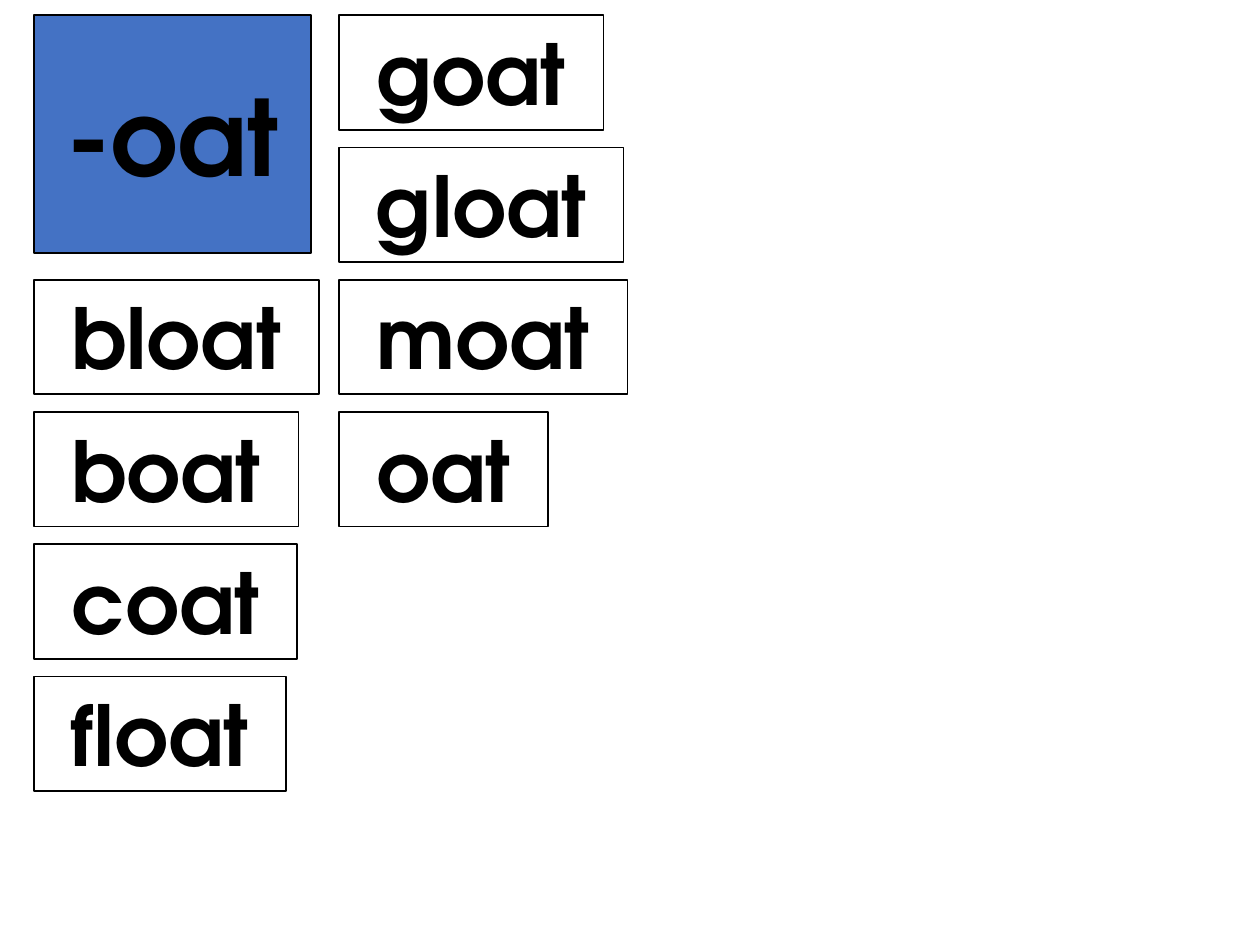
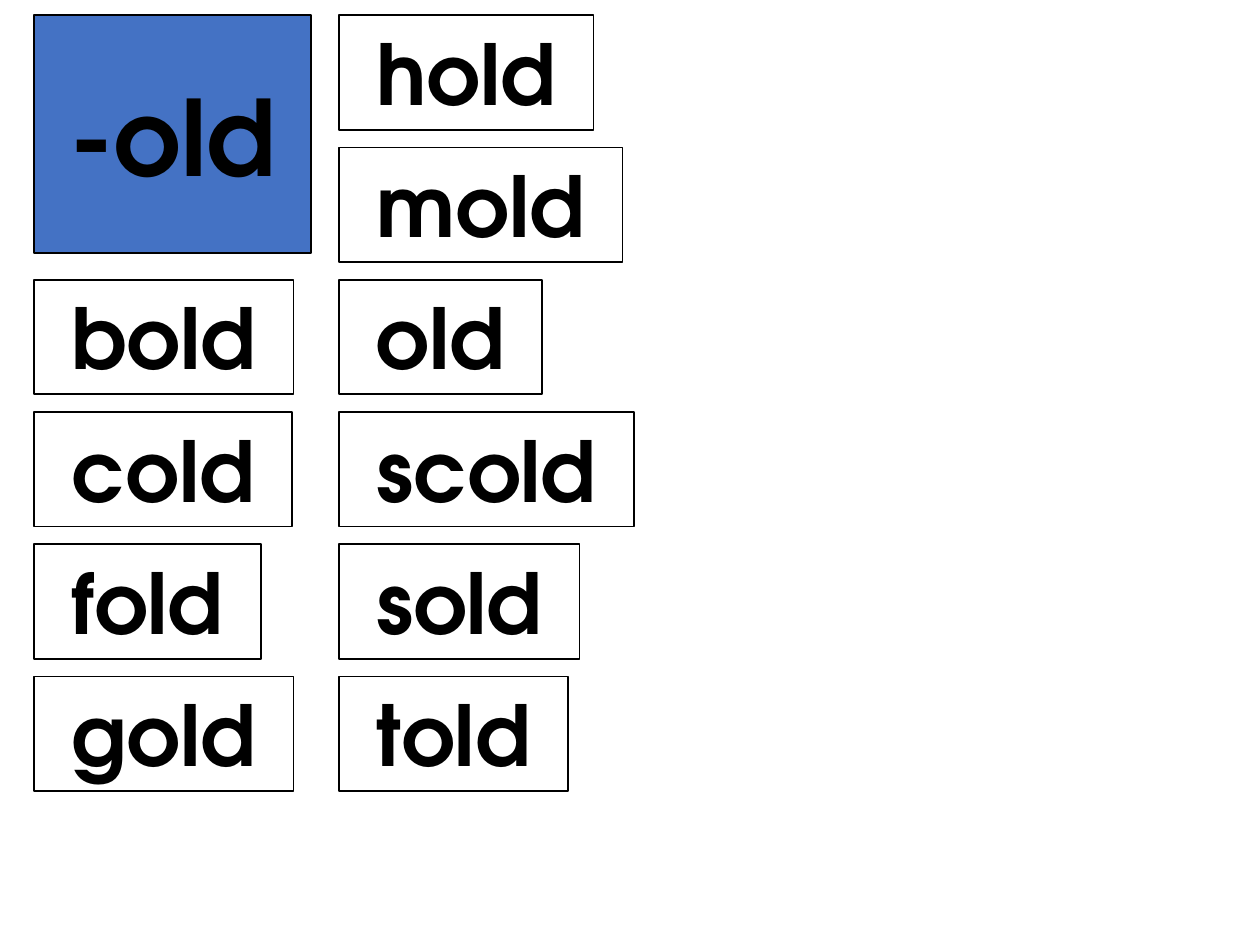
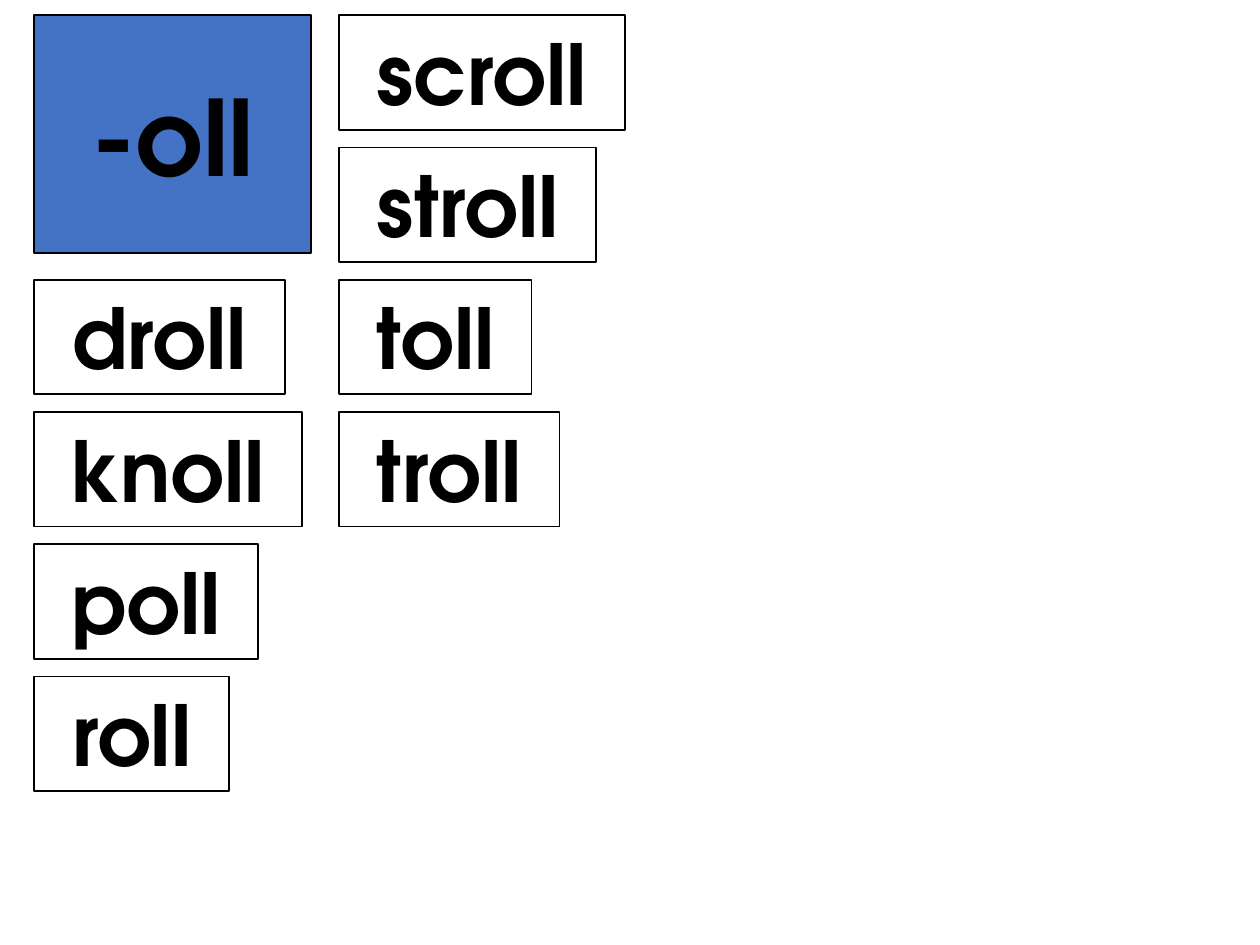
from pptx import Presentation
from pptx import util as u
from pptx.dml.color import RGBColor
from pptx.enum import text

BLACK = RGBColor(0x00, 0x00, 0x00)
WHITE = RGBColor(0xFF, 0xFF, 0xFF)
BLUE = RGBColor(0x44, 0x72, 0xC4)
FONT = "TeX Gyre Adventor"
NBSP = " "

TITLE_ONLY = 5
LEFT_COLUMN, RIGHT_COLUMN = 0.27, 2.69
TOP, ROW_STEP = 0.12, 1.05
CARD_HEIGHT = 0.91
ENDING_WIDTH, ENDING_HEIGHT = 2.2, 1.89
LEFT_FIRST_ROW, RIGHT_FIRST_ROW = 2, 0

WORD_FAMILIES = [
    (
        "-oat",
        [("bloat", 2.26), ("boat", 2.1), ("coat", 2.09), ("float", 2.0)],
        [("goat", 2.1), ("gloat", 2.26), ("moat", 2.29), ("oat", 1.66)],
    ),
    (
        "-old",
        [("bold", 2.06), ("cold", 2.05), ("fold", 1.8), ("gold", 2.06)],
        [("hold", 2.02), ("mold", 2.25), ("old", 1.61),
         ("scold", 2.34), ("sold", 1.91), ("told", 1.82)],
    ),
    (
        "-oll",
        [("droll", 1.99), ("knoll", 2.13), ("poll", 1.78), ("roll", 1.55)],
        [("scroll", 2.27), ("stroll", 2.04), ("toll", 1.53), ("troll", 1.75)],
    ),
]


class WordWall:
    def __init__(self, presentation):
        self.presentation = presentation
        self.slide = None

    def add_slide(self):
        layout = self.presentation.slide_layouts[TITLE_ONLY]
        self.slide = self.presentation.slides.add_slide(layout)

    def style(self, shape, words, size, fill):
        shape.fill.solid()
        shape.fill.fore_color.rgb = fill
        shape.line.color.rgb = BLACK
        shape.line.width = u.Pt(1)
        shape.text_frame.text = words
        paragraph = shape.text_frame.paragraphs[0]
        paragraph.alignment = text.PP_ALIGN.CENTER
        font = paragraph.runs[0].font
        font.name = FONT
        font.size = u.Pt(size)
        font.bold = True
        font.color.rgb = BLACK

    def ending(self, words):
        title = self.slide.shapes.title
        title.left, title.top = u.Inches(LEFT_COLUMN), u.Inches(TOP)
        title.width, title.height = u.Inches(ENDING_WIDTH), u.Inches(ENDING_HEIGHT)
        self.style(title, words, 60, BLUE)
        title.text_frame.word_wrap = True
        title.text_frame.auto_size = text.MSO_AUTO_SIZE.NONE
        title.text_frame.vertical_anchor = text.MSO_ANCHOR.MIDDLE

    def card(self, word, left, top, width):
        card = self.slide.shapes.add_textbox(
            u.Inches(left), u.Inches(top), u.Inches(width), u.Inches(CARD_HEIGHT)
        )
        self.style(card, f"{NBSP}{word} ", 48, WHITE)
        card.text_frame.word_wrap = False
        card.text_frame.auto_size = text.MSO_AUTO_SIZE.SHAPE_TO_FIT_TEXT

    def column(self, cards, left, first_row):
        for row, (word, width) in enumerate(cards, first_row):
            self.card(word, left, TOP + row * ROW_STEP, width)


def main():
    presentation = Presentation()
    presentation.slide_width = u.Inches(10)
    presentation.slide_height = u.Inches(7.5)
    wall = WordWall(presentation)
    for ending, left_cards, right_cards in WORD_FAMILIES:
        wall.add_slide()
        wall.ending(ending)
        wall.column(left_cards, LEFT_COLUMN, LEFT_FIRST_ROW)
        wall.column(right_cards, RIGHT_COLUMN, RIGHT_FIRST_ROW)
    presentation.save("out.pptx")


if __name__ == "__main__":
    main()
